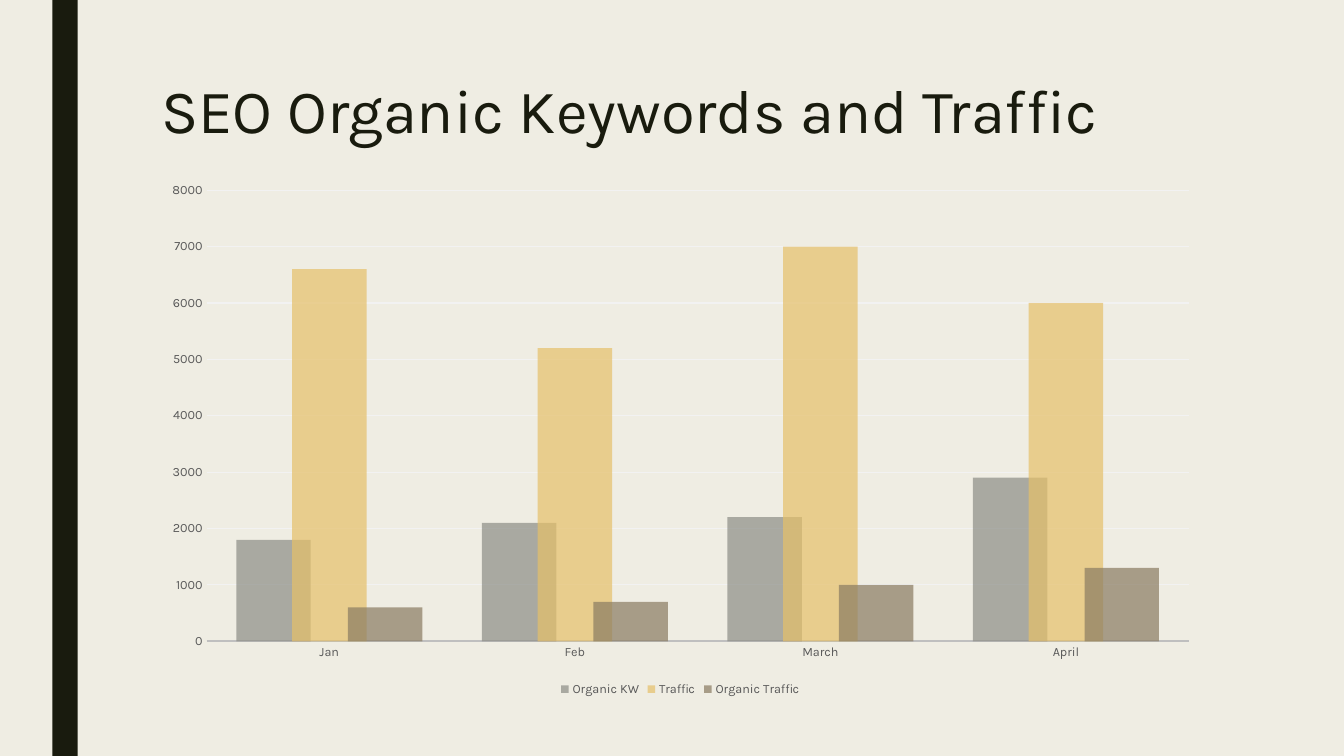
from lxml import etree
from pptx import Presentation
from pptx.chart.data import CategoryChartData
from pptx.dml.color import RGBColor
from pptx.enum.chart import XL_CHART_TYPE, XL_LEGEND_POSITION, XL_TICK_MARK
from pptx.enum.shapes import MSO_SHAPE
from pptx.enum.text import MSO_ANCHOR
from pptx.oxml.ns import qn
from pptx.util import Inches, Pt

COLUMNS = XL_CHART_TYPE.COLUMN_CLUSTERED
BOTTOM = XL_LEGEND_POSITION.BOTTOM
NO_TICK = XL_TICK_MARK.NONE
RECTANGLE = MSO_SHAPE.RECTANGLE
TOP = MSO_ANCHOR.TOP

CREAM = RGBColor(0xEF, 0xED, 0xE3)
INK = RGBColor(0x19, 0x1B, 0x0E)
LABEL = RGBColor(0x59, 0x59, 0x59)
AXIS = RGBColor(0xBF, 0xBF, 0xBF)
GRID = RGBColor(0xF2, 0xF2, 0xF2)
GRAY = RGBColor(0x8C, 0x8D, 0x86)
GOLD = RGBColor(0xE6, 0xC0, 0x69)
BROWN = RGBColor(0x89, 0x7B, 0x61)

FONT = "Karla"
TITLE = "SEO Organic Keywords and Traffic"
MONTHS = ["Jan", "Feb", "March", "April"]
SERIES = [
    ("Organic KW", [1800, 2100, 2200, 2900], GRAY),
    ("Traffic", [6600, 5200, 7000, 6000], GOLD),
    ("Organic Traffic", [600, 700, 1000, 1300], BROWN),
]
OPACITY = 70
SLIDE_SIZE = (13.33, 7.5)
BAR_BOX = (0.52, 0, 0.25, 7.5)
TITLE_BOX = (1.5, 0.75, 10.5, 1.62)
CHART_BOX = (1.5, 1.71, 10.5, 5.24)
TITLE_FORMAT = {"name": FONT, "size": Pt(44)}
LABEL_FORMAT = {"name": FONT, "size": Pt(9)}


def inches(box):
    return [Inches(n) for n in box]


def style_font(font, values, color):
    for name, value in values.items():
        setattr(font, name, value)
    font.color.rgb = color


def style_line(line, color, width):
    line.color.rgb = color
    line.width = Pt(width)


def add_bar(s):
    bar = s.shapes.add_shape(RECTANGLE, *inches(BAR_BOX))
    bar.shadow.inherit = False
    bar.fill.solid()
    bar.fill.fore_color.rgb = INK
    bar.line.fill.background()


def add_title(s):
    tf = s.shapes.add_textbox(*inches(TITLE_BOX)).text_frame
    tf.word_wrap = True
    tf.vertical_anchor = TOP
    p = tf.paragraphs[0]
    p.line_spacing = 0.89
    r = p.add_run()
    r.text = TITLE
    style_font(r.font, TITLE_FORMAT, INK)


def add_traffic_chart(s):
    data = CategoryChartData()
    data.categories = MONTHS
    for name, values, _ in SERIES:
        data.add_series(name, values)
    chart = s.shapes.add_chart(COLUMNS, *inches(CHART_BOX), data).chart
    chart.has_title = False
    chart.has_legend = True
    chart.legend.position = BOTTOM
    chart.legend.include_in_layout = False
    style_font(chart.font, LABEL_FORMAT, LABEL)
    style_font(chart.legend.font, LABEL_FORMAT, LABEL)

    for axis in (chart.category_axis, chart.value_axis):
        axis.major_tick_mark = axis.minor_tick_mark = NO_TICK
        style_font(axis.tick_labels.font, LABEL_FORMAT, LABEL)
    style_line(chart.category_axis.format.line, AXIS, 1.25)
    values = chart.value_axis
    values.minimum_scale, values.maximum_scale, values.major_unit = 0, 8000, 1000
    values.format.line.fill.background()
    style_line(values.major_gridlines.format.line, GRID, 0.75)

    plot = chart.plots[0]
    plot.gap_width = 80
    plot.overlap = 25
    plot.vary_by_categories = False
    for series, (_, _, color) in zip(plot.series, SERIES):
        fill = series.format.fill
        fill.solid()
        fill.fore_color.rgb = color
        rgb = series.format.element.find(".//" + qn("a:srgbClr")) if hasattr(
            series.format, "element") else next(series._element.iter(qn("a:srgbClr")))
        etree.SubElement(rgb, qn("a:alpha"), val=str(OPACITY * 1000))


def main():
    prs = Presentation()
    prs.slide_width, prs.slide_height = inches(SLIDE_SIZE)
    s = prs.slides.add_slide(prs.slide_layouts[6])
    s.background.fill.solid()
    s.background.fill.fore_color.rgb = CREAM
    add_bar(s)
    add_title(s)
    add_traffic_chart(s)
    prs.save("out.pptx")


if __name__ == "__main__":
    main()
